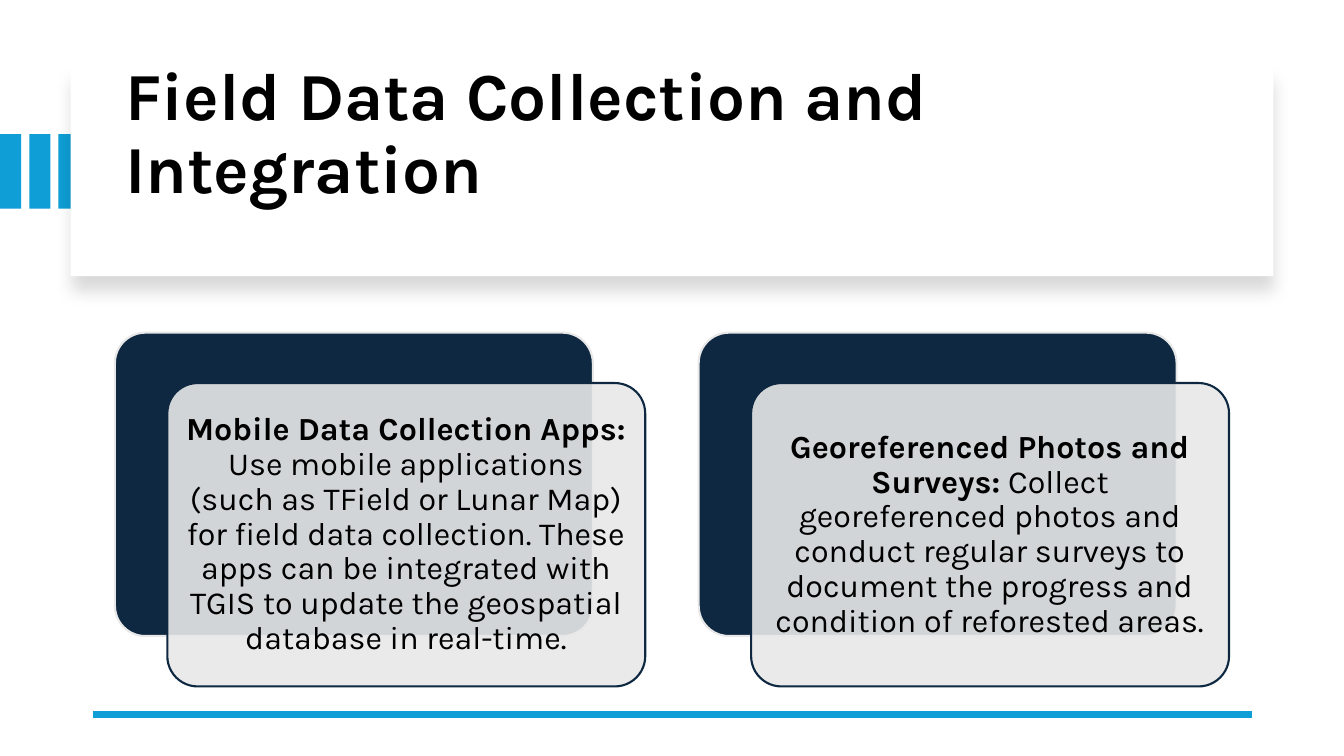
import pptx
import pptx.util
import pptx.dml.color
import pptx.enum.shapes
import pptx.enum.text
import pptx.oxml
import pptx.oxml.ns
from lxml import etree

Inches = pptx.util.Inches
Pt = pptx.util.Pt
SHAPE = pptx.enum.shapes.MSO_SHAPE
MIDDLE = pptx.enum.text.MSO_ANCHOR.MIDDLE
ALIGN = pptx.enum.text.PP_ALIGN
COLORS = {"sky": "0F9ED5", "navy": "0E2841", "mist": "E8E8E8",
          "white": "FFFFFF", "black": "000000"}
CARDS = [
    ("Mobile Data Collection Apps:",
     " Use mobile applications (such as TField or Lunar Map) for field data "
     "collection. These apps can be integrated with TGIS to update the "
     "geospatial database in real-time."),
    ("Georeferenced Photos and Surveys:",
     " Collect georeferenced photos and conduct regular surveys to document "
     "the progress and condition of reforested areas."),
]


def color(name):
    """Return the named colour."""
    return pptx.dml.color.RGBColor.from_string(COLORS[name])


def add_box(slide, kind, box, fill, line=None):
    """Add a filled shape with an optional outline."""
    shape = slide.shapes.add_shape(kind, *map(Inches, box))
    shape.shadow.inherit = False
    shape.fill.solid()
    shape.fill.fore_color.rgb = color(fill)
    if line:
        shape.line.color.rgb = color(line)
        shape.line.width = Pt(1.5)
    else:
        shape.line.fill.background()
    return shape


def add_shade(shape):
    """Cast a soft shadow straight down."""
    space = pptx.oxml.ns.nsdecls("a")
    effects = shape.element.spPr.find(pptx.oxml.ns.qn("a:effectLst"))
    effects.append(pptx.oxml.parse_xml(
        f'<a:outerShdw {space} blurRad="{Pt(11)}" dist="{Pt(10)}" '
        'dir="5400000" algn="t" rotWithShape="0"><a:srgbClr '
        f'val="{COLORS["black"]}"><a:alpha val="15000"/></a:srgbClr>'
        '</a:outerShdw>'))


def set_font(para, size):
    """Give a paragraph the common font and line pitch."""
    para.line_spacing = 0.9
    para.font.name = "Karla"
    para.font.size = Pt(size)
    para.font.color.rgb = color("black")


def add_title(slide, text):
    """Fill the title placeholder and bring it in front of its panel."""
    title = slide.shapes.title
    title.left, title.top, title.width, title.height = map(
        Inches, (1.14, 0.89, 11.13, 1.7))
    frame = title.text_frame
    frame.text = text
    frame.word_wrap = True
    frame.auto_size = pptx.enum.text.MSO_AUTO_SIZE.NONE
    frame.vertical_anchor = MIDDLE
    para = frame.paragraphs[0]
    set_font(para, 48)
    para.font.bold = True
    para.alignment = ALIGN.LEFT
    title.element.getparent().append(title.element)


def add_rule(slide):
    """Draw the line along the foot of the slide."""
    rule = slide.shapes.add_connector(
        pptx.enum.shapes.MSO_CONNECTOR.STRAIGHT,
        Inches(12.42), Inches(7.09), Inches(0.92), Inches(7.09))
    rule.line.color.rgb = color("sky")
    rule.line.width = Pt(4.5)
    etree.SubElement(rule.element.spPr, pptx.oxml.ns.qn("a:effectLst"))


def add_card(slide, left, head, body):
    """Stack a pale text card over a dark one."""
    kind = SHAPE.ROUNDED_RECTANGLE
    back = add_box(slide, kind, (left, 3.3, 4.74, 3.01), "navy", "mist")
    front = add_box(slide, kind, (left + 0.52, 3.8, 4.74, 3.01),
                    "mist", "navy")
    for shape in (back, front):
        shape.adjustments[0] = 0.1
    tint = front.element.spPr.find(".//" + pptx.oxml.ns.qn("a:srgbClr"))
    etree.SubElement(tint, pptx.oxml.ns.qn("a:alpha"), val="90000")

    text = slide.shapes.add_textbox(
        *map(Inches, (left + 0.61, 3.89, 4.56, 2.83)))
    frame = text.text_frame
    frame.word_wrap = True
    frame.vertical_anchor = MIDDLE
    frame.margin_left = frame.margin_right = Inches(0.09)
    frame.margin_top = frame.margin_bottom = Inches(0.09)
    para = frame.paragraphs[0]
    para.alignment = ALIGN.CENTER
    set_font(para, 23)
    for part, bold in ((head, True), (body, False)):
        run = para.add_run()
        run.text = part
        run.font.bold = bold


def main():
    """Build and save the slide."""
    deck = pptx.Presentation()
    deck.slide_width, deck.slide_height = Inches(13.33), Inches(7.5)
    slide = deck.slides.add_slide(deck.slide_layouts[5])
    for i in range(3):
        add_box(slide, SHAPE.RECTANGLE, (i * 0.29, 1.33, 0.21, 0.74), "sky")
    panel = add_box(slide, SHAPE.RECTANGLE, (0.7, 0.67, 11.93, 2.07), "white")
    add_shade(panel)
    add_title(slide, "Field Data Collection and Integration\v")
    add_rule(slide)
    for i, (head, body) in enumerate(CARDS):
        add_card(slide, 1.14 + i * 5.79, head, body)
    deck.save("out.pptx")


if __name__ == "__main__":
    main()
